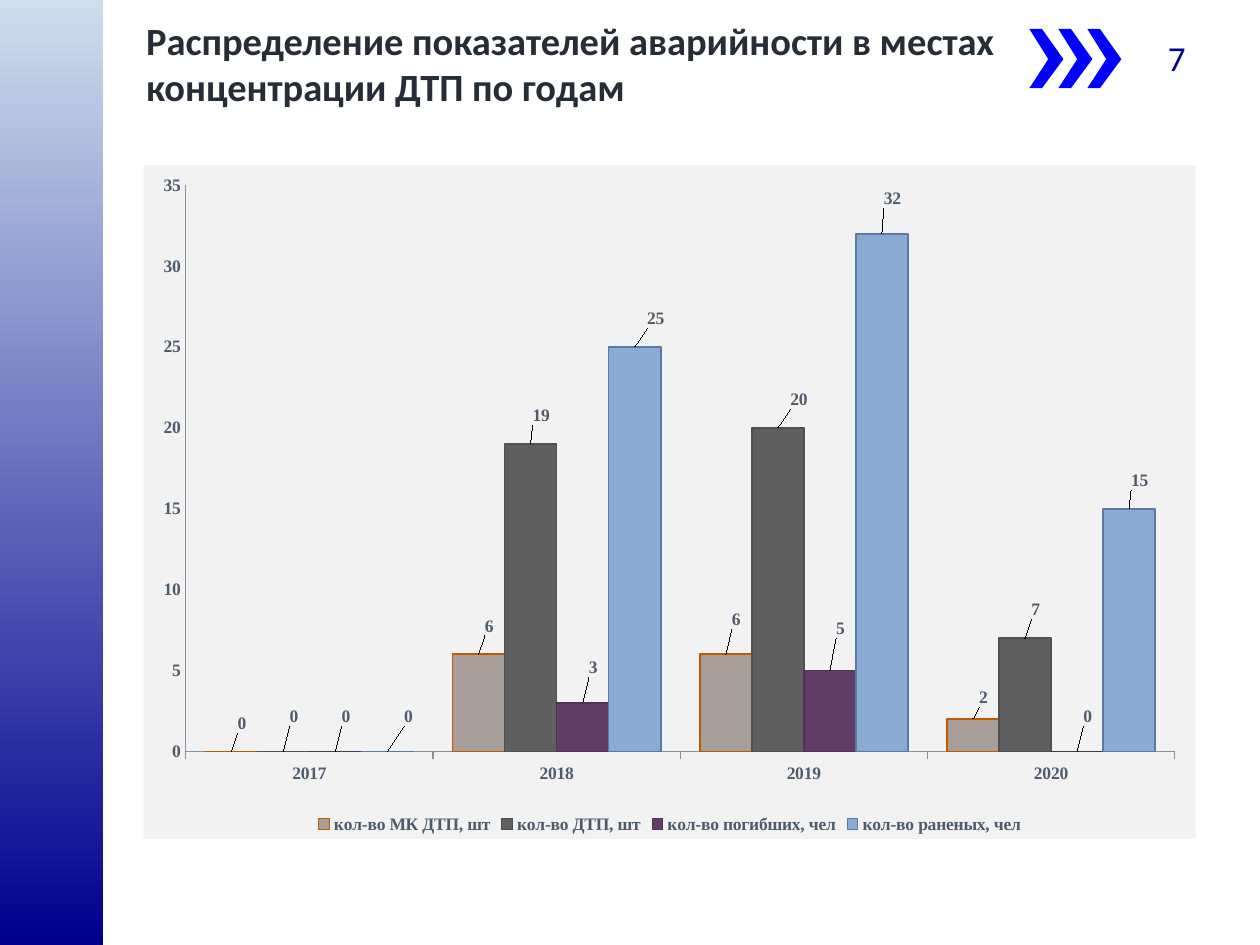
from dataclasses import dataclass

from lxml import etree
from pptx import Presentation
from pptx import util as u
from pptx.chart import data as cd
from pptx.dml.color import RGBColor
from pptx.enum import chart as ce
from pptx.enum import shapes, text
from pptx.oxml.ns import qn

NAVY = RGBColor(0x00, 0x00, 0x8E)
PALE_BLUE = RGBColor(0xD0, 0xDD, 0xED)
BLUE = RGBColor(0x00, 0x00, 0xFF)
TITLE_INK = RGBColor(0x26, 0x2D, 0x36)
CHART_INK = RGBColor(0x4D, 0x5B, 0x6B)
AXIS_GREY = RGBColor(0x8A, 0x91, 0x9B)
PANEL_GREY = RGBColor(0xF2, 0xF2, 0xF2)

YEARS = ["2017", "2018", "2019", "2020"]


@dataclass
class Indicator:
    name: str
    values: tuple[int, ...]
    fill: RGBColor
    line: RGBColor
    label_dx: tuple[float, ...]
    label_dy: tuple[float, ...]


INDICATORS = [
    Indicator("кол-во МК ДТП, шт", (0, 6, 6, 2),
              RGBColor(0xA7, 0x9D, 0x99), RGBColor(0xC0, 0x5A, 0x00),
              (0.01, 0.01, 0.01, 0.01), (-0.02, -0.02, -0.03, -0.01)),
    Indicator("кол-во ДТП, шт", (0, 19, 20, 7),
              RGBColor(0x5F, 0x5F, 0x5F), RGBColor(0x50, 0x50, 0x50),
              (0.01, 0.01, 0.02, 0.01), (-0.03, -0.02, -0.02, -0.02)),
    Indicator("кол-во погибших, чел", (0, 3, 5, 0),
              RGBColor(0x5F, 0x3D, 0x64), RGBColor(0x50, 0x33, 0x55),
              (0.01, 0.01, 0.01, 0.01), (-0.03, -0.03, -0.04, -0.03)),
    Indicator("кол-во раненых, чел", (0, 25, 32, 15),
              RGBColor(0x89, 0xAA, 0xD3), RGBColor(0x5B, 0x7A, 0xA3),
              (0.02, 0.02, 0.01, 0.01), (-0.03, -0.02, -0.03, -0.02)),
]


def make_layout(**values: object) -> etree._Element:
    layout = etree.Element(qn("c:layout"))
    manual = etree.SubElement(layout, qn("c:manualLayout"))
    for tag, value in values.items():
        etree.SubElement(manual, qn(f"c:{tag}")).set("val", str(value))
    return layout


def add_side_band(s) -> None:
    sp = s.shapes.add_shape(shapes.MSO_SHAPE.RECTANGLE, 0, 0, u.Inches(0.82), u.Inches(7.5))
    sp.shadow.inherit = False
    sp.line.fill.background()
    sp.fill.gradient()
    sp.fill.gradient_angle = 270
    for stop, color, position in zip(sp.fill.gradient_stops, (PALE_BLUE, NAVY), (0, 1)):
        stop.color.rgb = color
        stop.position = position


def add_chevron(s, left: float) -> None:
    top, middle, bottom = 0.23, 0.47, 0.7
    points = [(left, top), (left + 0.15, middle), (left, bottom),
              (left + 0.1, bottom), (left + 0.27, middle), (left + 0.1, top)]
    points = [(u.Inches(x), u.Inches(y)) for x, y in points]
    builder = s.shapes.build_freeform(*points[0])
    builder.add_line_segments(points[1:], close=True)
    sp = builder.convert_to_shape()
    sp.shadow.inherit = False
    sp.fill.solid()
    sp.fill.fore_color.rgb = BLUE
    sp.line.fill.background()


def fill_title(s) -> None:
    sp = s.shapes.title
    sp.left, sp.top, sp.width, sp.height = map(u.Inches, (1.06, 0.13, 7.09, 0.79))
    tf = sp.text_frame
    tf.text = "Распределение показателей аварийности в местах концентрации ДТП по годам"
    tf.auto_size = text.MSO_AUTO_SIZE.NONE
    tf.vertical_anchor = text.MSO_ANCHOR.BOTTOM
    p = tf.paragraphs[0]
    p.alignment = text.PP_ALIGN.LEFT
    font = p.runs[0].font
    font.name, font.size, font.bold = "Calibri", u.Pt(22), True
    font.color.rgb = TITLE_INK


def add_page_number(s) -> None:
    sp = s.shapes.add_textbox(*map(u.Inches, (8.91, 0.26, 0.86, 0.4)))
    tf = sp.text_frame
    tf.word_wrap = True
    tf.text = "7"
    tf.vertical_anchor = text.MSO_ANCHOR.MIDDLE
    p = tf.paragraphs[0]
    p.alignment = text.PP_ALIGN.CENTER
    font = p.runs[0].font
    font.name, font.size = "Calibri", u.Pt(20)
    font.color.rgb = NAVY


def style_series(series, indicator: Indicator) -> None:
    series.invert_if_negative = False
    series.format.fill.solid()
    series.format.fill.fore_color.rgb = indicator.fill
    series.format.line.color.rgb = indicator.line
    series.format.line.width = u.Pt(1)
    series.data_labels.show_value = True
    for i, (dx, dy) in enumerate(zip(indicator.label_dx, indicator.label_dy)):
        series.points[i].data_label.position = ce.XL_LABEL_POSITION.OUTSIDE_END
        idx = series._element.find(f".//{qn('c:dLbl')}[{i + 1}]/{qn('c:idx')}")
        idx.addnext(make_layout(x=dx, y=dy))


def add_accident_chart(s) -> None:
    chart_data = cd.CategoryChartData()
    chart_data.categories = YEARS
    for indicator in INDICATORS:
        chart_data.add_series(indicator.name, indicator.values)
    chart = s.shapes.add_chart(ce.XL_CHART_TYPE.COLUMN_CLUSTERED,
                               *map(u.Inches, (1.14, 1.31, 8.35, 5.35)), chart_data).chart
    chart.has_title = False
    chart.font.name, chart.font.size, chart.font.bold = "Times New Roman", u.Pt(10), True
    chart.font.color.rgb = CHART_INK
    chart.has_legend = True
    chart.legend.position = ce.XL_LEGEND_POSITION.BOTTOM
    chart.legend.include_in_layout = False

    plot = chart.plots[0]
    plot.gap_width, plot.overlap, plot.vary_by_categories = 75, 0, False
    for series, indicator in zip(plot.series, INDICATORS):
        style_series(series, indicator)

    value_axis, category_axis = chart.value_axis, chart.category_axis
    value_axis.minimum_scale, value_axis.maximum_scale, value_axis.major_unit = 0, 35, 5
    value_axis.has_major_gridlines = False
    value_axis.major_tick_mark = ce.XL_TICK_MARK.NONE
    category_axis.major_tick_mark = ce.XL_TICK_MARK.OUTSIDE
    for axis in (value_axis, category_axis):
        axis.format.line.color.rgb = AXIS_GREY
        axis.format.line.width = u.Pt(0.75)

    space = chart._chartSpace
    plot_area = space.find(f".//{qn('c:plotArea')}")
    for layout in plot_area.findall(qn("c:layout")):
        plot_area.remove(layout)
    plot_area.insert(0, make_layout(layoutTarget="inner", xMode="edge", yMode="edge",
                                    x=0.04, y=0.03, w=0.94, h=0.84))
    panel = etree.Element(qn("c:spPr"))
    fill = etree.SubElement(panel, qn("a:solidFill"))
    etree.SubElement(fill, qn("a:srgbClr")).set("val", str(PANEL_GREY))
    line = etree.SubElement(panel, qn("a:ln"))
    etree.SubElement(line, qn("a:noFill"))
    space.find(qn("c:chart")).addnext(panel)


def main() -> None:
    prs = Presentation()
    prs.slide_width, prs.slide_height = u.Inches(10), u.Inches(7.5)
    s = prs.slides.add_slide(prs.slide_layouts[0])
    subtitle = s.placeholders[1]._element
    subtitle.getparent().remove(subtitle)
    add_side_band(s)
    for i in range(3):
        add_chevron(s, 8.17 + 0.23 * i)
    fill_title(s)
    add_page_number(s)
    add_accident_chart(s)
    prs.save("out.pptx")


if __name__ == "__main__":
    main()
